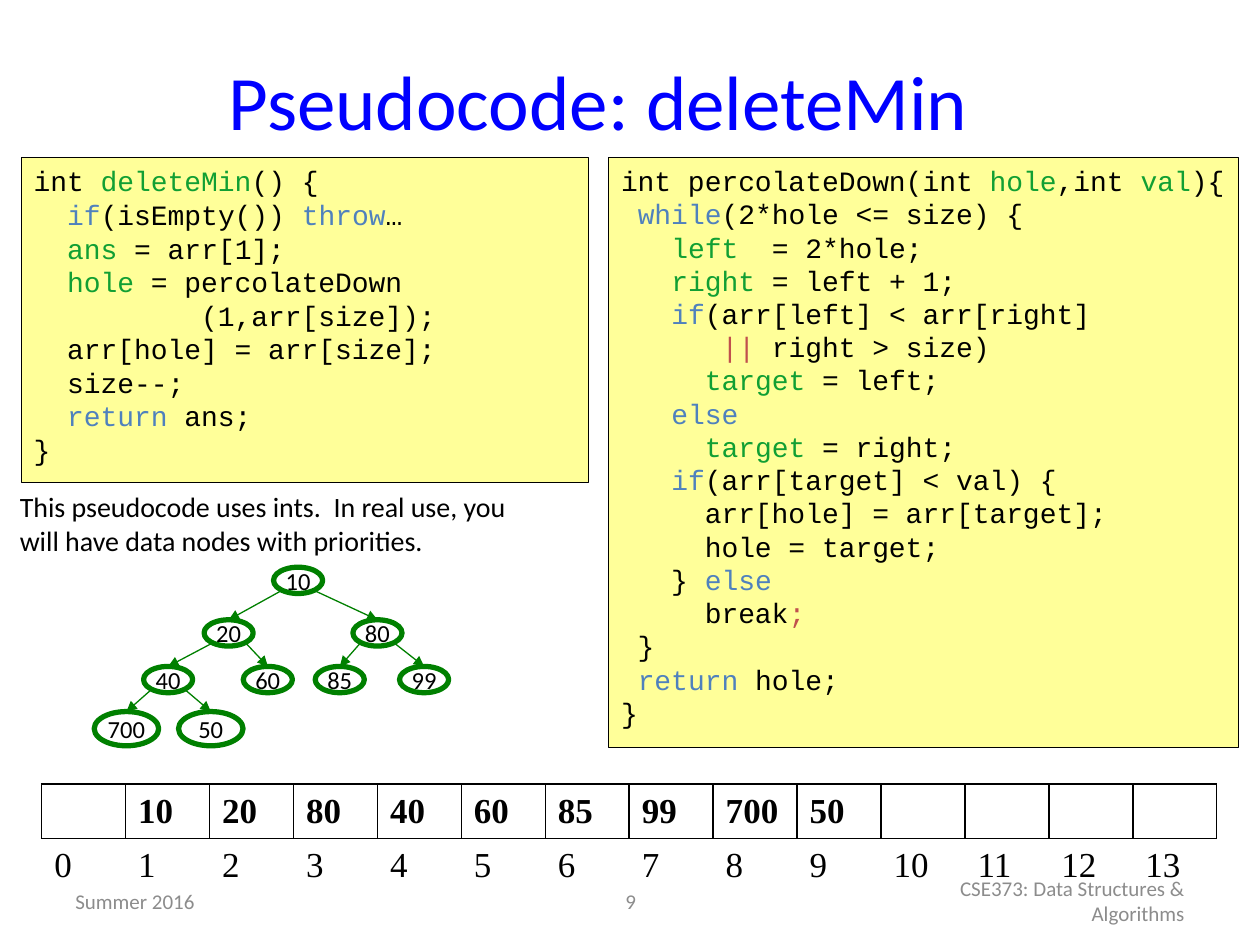
import pptx
import pptx.dml.color
import pptx.enum.shapes
import pptx.enum.text
import pptx.oxml.ns
import pptx.util
import lxml.etree
from pptx.util import Cm

COLORS = {
    "title": "0000FF",
    "footer": "8C8C8C",
    "panel": "FFFF99",
    "ink": "000000",
    "tree": "008000",
    "name": "119F33",
    "keyword": "4F81BD",
    "warning": "C0504D",
}

TITLE = "Pseudocode: deleteMin"
NOTE = "This pseudocode uses ints.  In real use, you will have data nodes with priorities."
FOOTERS = [
    ("Summer 2016", 1.27, 5.92, "LEFT"),
    ("9", 8.69, 8.05, "CENTER"),
    ("CSE373: Data Structures & Algorithms", 18.21, 5.92, "RIGHT"),
]

DELETE_MIN = """int `deleteMin`() {
  `if`(isEmpty()) `throw`…
  `ans` = arr[1];
  `hole` = percolateDown
          (1,arr[size]);
  arr[hole] = arr[size];
  size--;
  `return` ans;
}"""
PERCOLATE_DOWN = """int percolateDown(int `hole`,int `val`){
 `while`(2*hole <= size) {
   `left`  = 2*hole;
   `right` = left + 1;
   `if`(arr[left] < arr[right]
      `||` right > size)
     `target` = left;
   `else`
     `target` = right;
   `if`(arr[target] < val) {
     arr[hole] = arr[target];
     hole = target;
   } `else`
     break`;`
 }
 `return` hole;
}"""
KEYWORDS = {"if", "throw", "return", "while", "else"}
WARNINGS = {"||", ";"}

HEAP = [10, 20, 80, 40, 60, 85, 99, 700, 50]
NODE_CENTERS = [6.01, 4.61, 7.61, 3.39, 5.4, 6.85, 8.55, 2.55, 4.25]
LEVEL_CENTERS = [11.7, 12.76, 13.7, 14.69]
NODE_SIZE = (0.99, 0.53)
LEAF_SIZE = (1.3, 0.69)
EDGE_START = (0.36, 0.22)
ARRAY_LENGTH = 14


def rgb(key):
    return pptx.dml.color.RGBColor.from_string(COLORS[key])


def style_span(span, font, size, color, bold=False):
    span.font.name = font
    span.font.size = pptx.util.Pt(size)
    span.font.bold = bold
    span.font.color.rgb = rgb(color)


def write(frame, text, font, size, color, align="LEFT", anchor="MIDDLE", bold=False):
    frame.text = text
    frame.vertical_anchor = getattr(pptx.enum.text.MSO_ANCHOR, anchor)
    para = frame.paragraphs[0]
    para.alignment = getattr(pptx.enum.text.PP_ALIGN, align)
    for span in para.runs:
        style_span(span, font, size, color, bold)


def add_label(page, place, text, size, color, align="LEFT", anchor="MIDDLE"):
    box = page.shapes.add_textbox(*map(Cm, place))
    box.text_frame.word_wrap = True
    write(box.text_frame, text, "Calibri", size, color, align, anchor)


def token_color(token):
    if token in KEYWORDS:
        return "keyword"
    return "warning" if token in WARNINGS else "name"


def add_code(page, place, code, spacing=None):
    box = page.shapes.add_shape(pptx.enum.shapes.MSO_SHAPE.RECTANGLE, *map(Cm, place))
    box.shadow.inherit = False
    box.fill.solid()
    box.fill.fore_color.rgb = rgb("panel")
    box.line.color.rgb = rgb("ink")
    box.line.width = pptx.util.Pt(0.75)
    frame = box.text_frame
    frame.word_wrap = True
    frame.margin_right = 0
    frame.vertical_anchor = pptx.enum.text.MSO_ANCHOR.TOP
    for number, line in enumerate(code.splitlines()):
        para = frame.add_paragraph() if number else frame.paragraphs[0]
        para.alignment = pptx.enum.text.PP_ALIGN.LEFT
        if spacing:
            para.line_spacing = pptx.util.Pt(spacing)
        for index, part in enumerate(line.split("`")):
            if part:
                span = para.add_run()
                span.text = part
                style_span(span, "Courier New", 16, token_color(part) if index % 2 else "ink")


def add_node(tree, value, x, y, width, height):
    node = tree.shapes.add_shape(
        pptx.enum.shapes.MSO_SHAPE.OVAL,
        Cm(x - width / 2), Cm(y - height / 2), Cm(width), Cm(height))
    node.shadow.inherit = False
    node.fill.background()
    node.line.color.rgb = rgb("tree")
    node.line.width = pptx.util.Pt(3)
    node.text_frame.word_wrap = False
    write(node.text_frame, str(value), "Calibri", 14, "ink", "CENTER")


def add_edge(tree, start, end):
    edge = tree.shapes.add_connector(
        pptx.enum.shapes.MSO_CONNECTOR.STRAIGHT, *map(Cm, start + end))
    edge.line.color.rgb = rgb("tree")
    edge.line.width = pptx.util.Pt(0.75)
    line = edge.line._get_or_add_ln()
    lxml.etree.SubElement(line, pptx.oxml.ns.qn("a:tailEnd"), type="triangle")
    lxml.etree.SubElement(edge._element.spPr, pptx.oxml.ns.qn("a:effectLst"))


def add_tree(page):
    tree = page.shapes.add_group_shape()
    for position, (value, x) in enumerate(zip(HEAP, NODE_CENTERS), start=1):
        level = position.bit_length() - 1
        y = LEVEL_CENTERS[level]
        width, height = LEAF_SIZE if level == 3 else NODE_SIZE
        add_node(tree, value, x, y, width, height)
        if position > 1:
            side = 1 if position % 2 else -1
            start = (NODE_CENTERS[position // 2 - 1] + side * EDGE_START[0],
                     LEVEL_CENTERS[level - 1] + EDGE_START[1])
            add_edge(tree, start, (x, y - height / 2))


def set_borders(cell, visible):
    properties = cell._tc.get_or_add_tcPr()
    for side in ("lnL", "lnR", "lnT", "lnB"):
        border = lxml.etree.SubElement(properties, pptx.oxml.ns.qn("a:" + side), w="12700")
        if side in visible:
            fill = lxml.etree.SubElement(border, pptx.oxml.ns.qn("a:solidFill"))
            lxml.etree.SubElement(fill, pptx.oxml.ns.qn("a:srgbClr"), val=COLORS["ink"])
        else:
            lxml.etree.SubElement(border, pptx.oxml.ns.qn("a:noFill"))


def add_array(page):
    values = [""] + HEAP + [""] * (ARRAY_LENGTH - len(HEAP) - 1)
    rows = [(values, True, ("lnL", "lnR", "lnT", "lnB")),
            (range(ARRAY_LENGTH), False, ("lnT",))]
    table = page.shapes.add_table(
        len(rows), ARRAY_LENGTH, Cm(0.84), Cm(15.8), Cm(23.7), Cm(2.2)).table
    table.first_row = False
    table.horz_banding = False
    for row, (items, bold, visible) in enumerate(rows):
        for column, item in enumerate(items):
            cell = table.cell(row, column)
            write(cell.text_frame, str(item), "Times New Roman", 20, "ink", bold=bold)
            cell.vertical_anchor = pptx.enum.text.MSO_ANCHOR.MIDDLE
            set_borders(cell, visible)
            cell.fill.background()


def main():
    deck = pptx.Presentation()
    deck.slide_width, deck.slide_height = Cm(25.4), Cm(19.05)
    page = deck.slides.add_slide(deck.slide_layouts[6])
    add_label(page, (1.27, 0.43, 21.59, 3.18), TITLE, 44, "title", "CENTER")
    for text, left, width, align in FOOTERS:
        add_label(page, (left, 17.65, width, 1.02), text, 12, "footer", align)
    add_code(page, (0.43, 3.18, 11.43, 6.55), DELETE_MIN)
    add_code(page, (12.27, 3.18, 12.7, 11.89), PERCOLATE_DOWN, 19)
    add_tree(page)
    add_array(page)
    add_label(page, (0.15, 9.75, 11, 1.7), NOTE, 16, "ink", anchor="TOP")
    deck.save("out.pptx")


if __name__ == "__main__":
    main()
